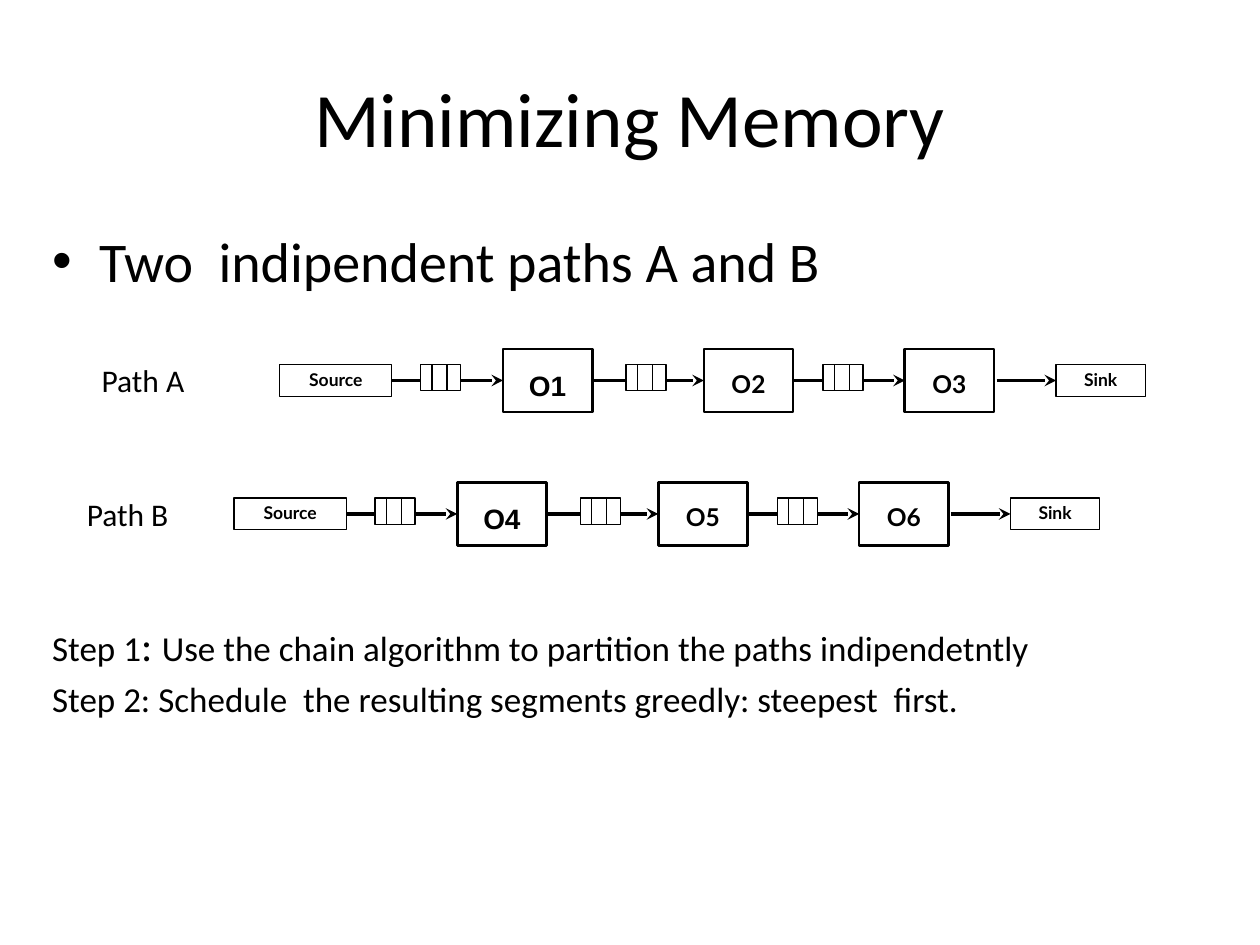
from dataclasses import dataclass

import pptx
import pptx.dml.color
import pptx.enum.shapes
import pptx.enum.text
import pptx.oxml.ns
import pptx.shapes.autoshape
import pptx.shapes.shapetree
import pptx.text.text
import pptx.util
from lxml import etree

Cm, Pt = pptx.util.Cm, pptx.util.Pt
qn = pptx.oxml.ns.qn
ALIGN = pptx.enum.text.PP_ALIGN
ANCHOR = pptx.enum.text.MSO_ANCHOR
Shapes = pptx.shapes.shapetree.GroupShapes

COLORS = {"ink": "000000", "paper": "FFFFFF"}

# Offsets from the left edge of a path's source, in cm
SOURCE_W, END_H = 2.26, 0.64
BOX_X, BOX_PITCH, BOX_W, BOX_H = 4.5, 4.05, 1.8, 1.27
LABEL_W = 0.9
SINK_X = 15.65
QUEUE_XS = (2.84, 6.98, 10.95)
QUEUE_W, QUEUE_H = 0.81, 0.53
DIVIDERS = (0.23, 0.53)


@dataclass(frozen=True)
class Path:
    name: str
    name_left: float
    left: float
    axis: float
    operators: tuple[str, str, str]


PATHS = (
    Path("Path B", 1.5, 4.72, 10.36, ("O4", "O5", "O6")),
    Path("Path A", 1.8, 5.64, 7.67, ("O1", "O2", "O3")),
)


def rgb(name: str) -> pptx.dml.color.RGBColor:
    return pptx.dml.color.RGBColor.from_string(COLORS[name])


def set_font(p: pptx.text.text._Paragraph, size: float,
             name: str = "Calibri", bold: bool = False) -> None:
    p.font.size, p.font.name, p.font.bold = Pt(size), name, bold
    p.font.color.rgb = rgb("ink")


def add_rect(shapes: Shapes, x: float, y: float, w: float, h: float,
             line: float = 0) -> pptx.shapes.autoshape.Shape:
    sp = shapes.add_shape(pptx.enum.shapes.MSO_SHAPE.RECTANGLE,
                          Cm(x), Cm(y), Cm(w), Cm(h))
    sp.shadow.inherit = False
    sp.fill.solid()
    sp.fill.fore_color.rgb = rgb("paper")
    if line:
        sp.line.color.rgb = rgb("ink")
        sp.line.width = Pt(line)
    else:
        sp.line.fill.background()
    return sp


def add_label(shapes: Shapes, text: str, x: float, axis: float, w: float,
              size: float, font: str = "Lato", line: float = 0) -> None:
    sp = add_rect(shapes, x, axis - END_H / 2, w, END_H, line)
    tf = sp.text_frame
    tf.margin_left = tf.margin_right = tf.margin_top = tf.margin_bottom = Cm(0.08)
    tf.vertical_anchor = ANCHOR.TOP
    tf.word_wrap = False
    p = tf.paragraphs[0]
    p.text = text
    p.alignment = ALIGN.CENTER
    set_font(p, size, font, bold=True)


def add_line(shapes: Shapes, x1: float, y1: float, x2: float, y2: float,
             width: float, arrow: bool = False) -> None:
    cxn = shapes.add_connector(pptx.enum.shapes.MSO_CONNECTOR.STRAIGHT,
                               Cm(x1), Cm(y1), Cm(x2), Cm(y2))
    cxn.line.color.rgb = rgb("ink")
    cxn.line.width = Pt(width)
    if arrow:
        etree.SubElement(cxn.line._get_or_add_ln(), qn("a:tailEnd"), type="stealth")
    etree.SubElement(cxn._element.spPr, qn("a:effectLst"))


def add_queue(shapes: Shapes, x: float, y: float) -> None:
    add_rect(shapes, x, y, QUEUE_W, QUEUE_H, 0.75)
    for dx in DIVIDERS:
        add_line(shapes, x + dx, y, x + dx, y + QUEUE_H, 0.75)


def add_path(shapes: Shapes, path: Path) -> None:
    """Draw source, queued operators and sink along one horizontal axis."""
    left, axis = path.left, path.axis
    add_label(shapes, "Source", left, axis, SOURCE_W, 10, line=0.75)
    start = left + SOURCE_W
    for i, (operator, queue_x) in enumerate(zip(path.operators, QUEUE_XS)):
        x = left + BOX_X + i * BOX_PITCH
        add_rect(shapes, x, axis - BOX_H / 2, BOX_W, BOX_H, 1.5)
        size, font = (16, "Arial") if i == 0 else (14, "Lato")
        add_label(shapes, operator, x + (BOX_W - LABEL_W) / 2, axis, LABEL_W, size, font)
        add_line(shapes, start, axis, x, axis, 2.25, arrow=True)
        add_queue(shapes, left + queue_x, axis - END_H / 2)
        start = x + BOX_W
    add_label(shapes, "Sink", left + SINK_X, axis, BOX_W, 10, line=0.75)
    add_line(shapes, start + 0.05, axis, left + SINK_X, axis, 2.25, arrow=True)


def add_text(shapes: Shapes, x: float, y: float, w: float, h: float,
             text: str, size: float) -> pptx.text.text.TextFrame:
    tf = shapes.add_textbox(Cm(x), Cm(y), Cm(w), Cm(h)).text_frame
    tf.word_wrap = True
    p = tf.paragraphs[0]
    p.text = text
    set_font(p, size)
    return tf


def add_bullet(p: pptx.text.text._Paragraph) -> None:
    pPr = p._p.get_or_add_pPr()
    pPr.set("marL", str(Cm(0.95)))
    pPr.set("indent", str(-Cm(0.95)))
    font = etree.Element(qn("a:buFont"), typeface="Arial")
    char = etree.Element(qn("a:buChar"), char="•")
    pPr.insert(0, font)
    font.addnext(char)


def add_body(shapes: Shapes) -> None:
    tf = add_text(shapes, 0.8, 4.45, 24.13, 12.57, "Two  indipendent paths A and B", 32)
    add_bullet(tf.paragraphs[0])
    steps = (
        (186, (("Step 1", 20), (": ", 24),
               ("Use the chain algorithm to partition the paths indipendetntly", 20))),
        (4, (("Step 2: Schedule  the resulting segments greedly: steepest  first.", 20),)),
    )
    for space, runs in steps:
        p = tf.add_paragraph()
        p.space_before = Pt(space)
        set_font(p, 20)
        for text, size in runs:
            r = p.add_run()
            r.text = text
            r.font.size = Pt(size)


def main() -> None:
    prs = pptx.Presentation()
    prs.slide_width, prs.slide_height = Cm(25.4), Cm(19.05)
    s = prs.slides.add_slide(prs.slide_layouts[6])

    title = add_text(s.shapes, 1.27, 0.76, 22.86, 3.18, "Minimizing Memory", 44)
    title.vertical_anchor = ANCHOR.MIDDLE
    title.paragraphs[0].alignment = ALIGN.CENTER
    add_body(s.shapes)

    for path in PATHS:
        add_path(s.shapes.add_group_shape().shapes, path)
        add_text(s.shapes, path.name_left, path.axis - 0.51, 2.74, 1.02, path.name, 18)

    prs.save("out.pptx")


if __name__ == "__main__":
    main()
